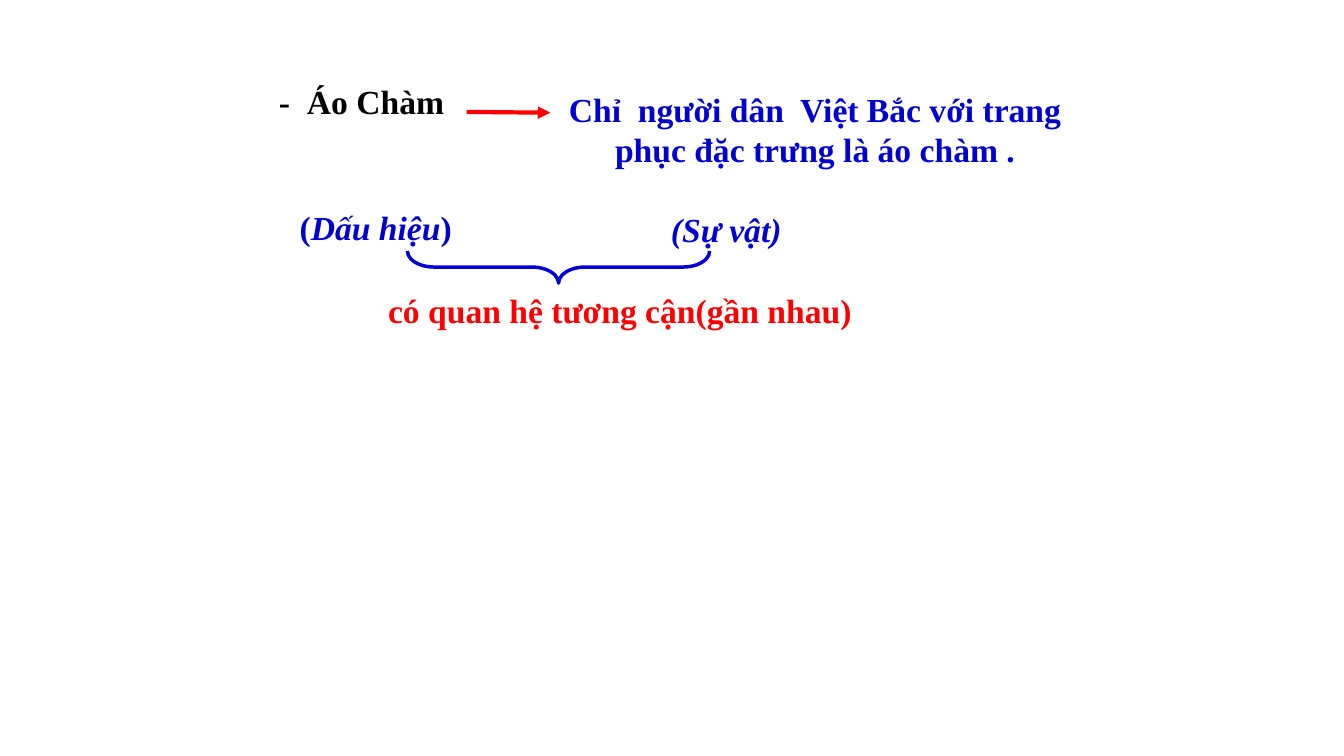
"""Build a slide explaining the metonymy of "Áo Chàm"."""
from dataclasses import dataclass

from lxml.etree import SubElement
from pptx import Presentation
from pptx.dml.color import RGBColor
from pptx.dml.line import LineFormat
from pptx.enum.shapes import MSO_CONNECTOR, MSO_SHAPE
from pptx.enum.text import MSO_AUTO_SIZE, PP_ALIGN
from pptx.oxml.ns import qn
from pptx.slide import Slide
from pptx.util import Cm, Pt

BLACK = "000000"
WHITE = "FFFFFF"
BLUE = "0000D2"
RED = "FF0000"


@dataclass(frozen=True)
class Segment:
    text: str
    italic: bool = False


@dataclass(frozen=True)
class Label:
    left: float
    top: float
    width: float
    segments: tuple[Segment, ...]
    color: str
    height: float = 1.27
    filled: bool = False
    alignment: PP_ALIGN = PP_ALIGN.LEFT


LABELS = (
    Label(6.78, 1.91, 5.03, (Segment("-  Áo Chàm"),), BLACK, filled=True),
    Label(
        13.44, 2.11, 14.2,
        (Segment("Chỉ  người dân  Việt Bắc với trang phục đặc trưng là áo chàm ."),),
        BLUE, height=2.31, filled=True, alignment=PP_ALIGN.CENTER,
    ),
    Label(16.66, 5.13, 6.55, (Segment("(Sự vật)", italic=True),), BLUE),
    Label(
        7.09, 5.08, 5.72,
        (Segment(" ("), Segment("Dấu hiệu", italic=True), Segment(")")), BLUE,
    ),
    Label(9.32, 7.19, 12.52, (Segment(" có quan hệ tương cận(gần nhau)"),), RED),
)


def rgb(color: str) -> RGBColor:
    return RGBColor.from_string(color)


def style_line(line: LineFormat, color: str, width: float) -> None:
    line.color.rgb = rgb(color)
    line.width = Pt(width)


def add_label(slide: Slide, label: Label) -> None:
    shape = slide.shapes.add_textbox(
        Cm(label.left), Cm(label.top), Cm(label.width), Cm(label.height)
    )
    if label.filled:
        shape.fill.solid()
        shape.fill.fore_color.rgb = rgb(WHITE)
    text_frame = shape.text_frame
    text_frame.word_wrap = True
    text_frame.auto_size = MSO_AUTO_SIZE.SHAPE_TO_FIT_TEXT
    paragraph = text_frame.paragraphs[0]
    paragraph.alignment = label.alignment
    font = paragraph.font
    font.name = "Times New Roman"
    font.size = Pt(24)
    font.bold = True
    font.color.rgb = rgb(label.color)
    for segment in label.segments:
        run = paragraph.add_run()
        run.text = segment.text
        if segment.italic:
            run.font.italic = True


def add_arrow(slide: Slide) -> None:
    arrow = slide.shapes.add_connector(
        MSO_CONNECTOR.STRAIGHT, Cm(11.76), Cm(2.82), Cm(13.87), Cm(2.84)
    )
    style_line(arrow.line, RED, 3)
    properties = arrow._element.spPr
    SubElement(properties.find(qn("a:ln")), qn("a:tailEnd"), type="triangle")
    SubElement(properties, qn("a:effectLst"))


def add_brace(slide: Slide) -> None:
    brace = slide.shapes.add_shape(
        MSO_SHAPE.RIGHT_BRACE, Cm(13.67), Cm(2.92), Cm(0.81), Cm(7.62)
    )
    brace.rotation = 90
    brace.adjustments[0] = 0.83
    brace.shadow.inherit = False
    brace.fill.background()
    style_line(brace.line, BLUE, 2.5)


def main() -> None:
    presentation = Presentation()
    presentation.slide_width = Cm(33.87)
    presentation.slide_height = Cm(19.05)
    slide = presentation.slides.add_slide(presentation.slide_layouts[6])
    for label in LABELS:
        add_label(slide, label)
    add_arrow(slide)
    add_brace(slide)
    presentation.save("out.pptx")


if __name__ == "__main__":
    main()
